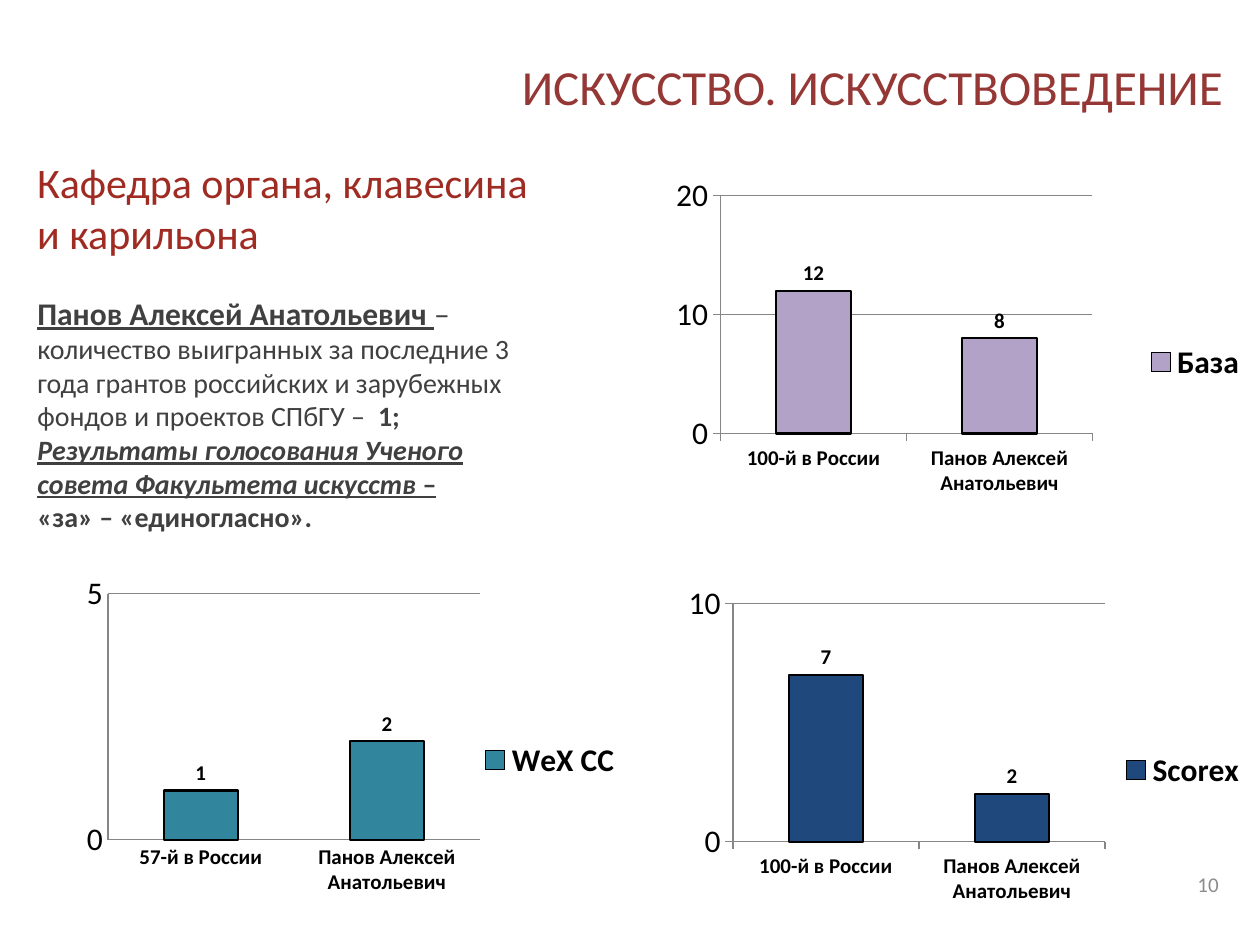
from collections import namedtuple
from dataclasses import dataclass

from lxml.etree import SubElement
from pptx import Presentation
from pptx.chart.data import CategoryChartData
from pptx.dml.color import RGBColor
from pptx.enum.chart import XL_CHART_TYPE, XL_LABEL_POSITION, XL_LEGEND_POSITION, XL_TICK_MARK
from pptx.enum.text import MSO_ANCHOR, MSO_AUTO_SIZE, PP_ALIGN
from pptx.oxml import parse_xml
from pptx.oxml.ns import nsdecls, qn
from pptx.util import Cm, Pt

Box = namedtuple("Box", "left top width height")
Plot = namedtuple("Plot", "x y w h")


@dataclass(frozen=True)
class Theme:
    font: str = "Calibri"
    title: str = "953735"
    head: str = "9F2B22"
    text: str = "404040"
    page: str = "8C8C8C"
    ink: str = "000000"
    grid: str = "868686"
    lilac: str = "B3A2C7"
    teal: str = "31859C"
    navy: str = "1F497D"
    huge: int = 28
    large: int = 24
    mid: int = 18
    base: int = 16
    small: int = 12


THEME = Theme()


def style(font, size, color, bold=False):
    font.name = THEME.font
    font.size = Pt(size)
    font.bold = bold
    font.color.rgb = RGBColor.from_string(color)


def place(shape, box):
    shape.left, shape.top, shape.width, shape.height = map(Cm, box)
    frame = shape.text_frame
    frame.word_wrap = True
    frame.auto_size = MSO_AUTO_SIZE.NONE
    return frame


def add_line(shape, box, text, size, color, align):
    frame = place(shape, box)
    frame.vertical_anchor = MSO_ANCHOR.MIDDLE
    frame.text = text
    line = frame.paragraphs[0]
    line.alignment = align
    style(line.runs[0].font, size, color)


def add_body(shape, box):
    frame = place(shape, box)
    frame.vertical_anchor = MSO_ANCHOR.TOP
    parts = [
        [
            ("Панов Алексей Анатольевич ", THEME.mid, "bu"),
            ("– ", THEME.mid, ""),
            ("количество выигранных за последние 3 года грантов российских "
             "и зарубежных фондов и проектов СПбГУ – ", THEME.base, ""),
            (" 1;", THEME.base, "b"),
        ],
        [
            ("Результаты голосования Ученого совета Факультета искусств ", THEME.base, "biu"),
            ("–", THEME.base, "bu"),
        ],
        [("«за» – «единогласно».", THEME.base, "b")],
    ]
    for index, runs in enumerate(parts):
        line = frame.add_paragraph() if index else frame.paragraphs[0]
        props = line._p.get_or_add_pPr()
        props.set("marL", "0")
        props.set("indent", "0")
        SubElement(props, qn("a:buNone"))
        line.space_before = Pt(0)
        for text, size, marks in runs:
            run = line.add_run()
            run.text = text
            style(run.font, size, THEME.text, "b" in marks)
            run.font.italic = "i" in marks
            run.font.underline = "u" in marks


def set_plot(chart, plot):
    area = chart.element.find(".//" + qn("c:plotArea"))
    for old in area.findall(qn("c:layout")):
        area.remove(old)
    sides = "".join(f'<c:{key} val="{val}"/>' for key, val in plot._asdict().items())
    area.insert(0, parse_xml(
        f'<c:layout {nsdecls("c")}><c:manualLayout><c:layoutTarget val="inner"/>'
        f'<c:xMode val="edge"/><c:yMode val="edge"/>{sides}</c:manualLayout></c:layout>'))


def add_graph(slide, box, plot, name, cats, vals, color, top, step, tick):
    data = CategoryChartData()
    data.categories = cats
    data.add_series(name, vals)
    chart = slide.shapes.add_chart(XL_CHART_TYPE.COLUMN_CLUSTERED, *map(Cm, box), data).chart
    chart.has_title = False
    style(chart.font, THEME.mid, THEME.ink)
    set_plot(chart, plot)

    chart.has_legend = True
    chart.legend.position = XL_LEGEND_POSITION.RIGHT
    chart.legend.include_in_layout = False
    style(chart.legend.font, THEME.mid, THEME.ink, True)

    scale = chart.value_axis
    scale.minimum_scale, scale.maximum_scale = 0, top
    scale.major_unit = step
    scale.has_major_gridlines = True
    style(chart.category_axis.tick_labels.font, THEME.small, THEME.ink, True)
    for axis in (scale, chart.category_axis):
        axis.major_tick_mark = tick
        axis.minor_tick_mark = XL_TICK_MARK.NONE
    for edge in (scale, chart.category_axis, scale.major_gridlines):
        edge.format.line.color.rgb = RGBColor.from_string(THEME.grid)
        edge.format.line.width = Pt(0.75)

    bars = chart.plots[0]
    bars.gap_width = 150
    bars.vary_by_categories = False
    bars.has_data_labels = True
    marks = bars.data_labels
    marks.show_value = True
    marks.position = XL_LABEL_POSITION.OUTSIDE_END
    style(marks.font, THEME.small, THEME.ink, True)
    look = bars.series[0].format
    look.fill.solid()
    look.fill.fore_color.rgb = RGBColor.from_string(color)
    look.line.color.rgb = RGBColor.from_string(THEME.ink)
    look.line.width = Pt(1.25)


def add_graphs(slide, box):
    wide, high = 12.5, 8
    right = box.left + box.width - wide
    low = box.top + box.height - high
    person = "Панов Алексей Анатольевич"
    land = ["100-й в России", person]
    out, none = XL_TICK_MARK.OUTSIDE, XL_TICK_MARK.NONE
    add_graph(slide, Box(right, low, wide, high), Plot(0.15, 0.08, 0.6, 0.6),
              "Scorex", land, [7, 2], THEME.navy, 10, 10, out)
    add_graph(slide, Box(box.left, low - 0.2, wide, high), Plot(0.15, 0.08, 0.6, 0.62),
              "WeX CC", ["57-й в России", person], [1, 2], THEME.teal, 5, 5, none)
    add_graph(slide, Box(right, box.top, wide, high), Plot(0.13, 0.08, 0.6, 0.6),
              "База", land, [12, 8], THEME.lilac, 20, 10, out)


def main():
    deck = Presentation()
    deck.slide_width, deck.slide_height = Cm(25.4), Cm(19.05)
    slide = deck.slides.add_slide(deck.slide_layouts[1])
    blank = Box(0, 0, 1, 1)
    head, page = (slide.shapes.add_textbox(*map(Cm, blank)) for _ in range(2))
    add_line(slide.shapes.title, Box(6.5, 0.76, 18.4, 1.96),
             "ИСКУССТВО. ИСКУССТВОВЕДЕНИЕ", THEME.huge, THEME.title, PP_ALIGN.RIGHT)
    add_line(head, Box(0.5, 3.02, 10.8, 2.31),
             "Кафедра органа, клавесина и карильона", THEME.large, THEME.head, PP_ALIGN.LEFT)
    add_body(slide.placeholders[1], Box(0.5, 5.8, 10.8, 5.9))
    add_graphs(slide, Box(0.3, 3.3, 25.1, 16.23))
    add_line(page, Box(18.9, 17.32, 5.92, 1.02), "10", THEME.small, THEME.page, PP_ALIGN.RIGHT)
    deck.save("out.pptx")


if __name__ == "__main__":
    main()
